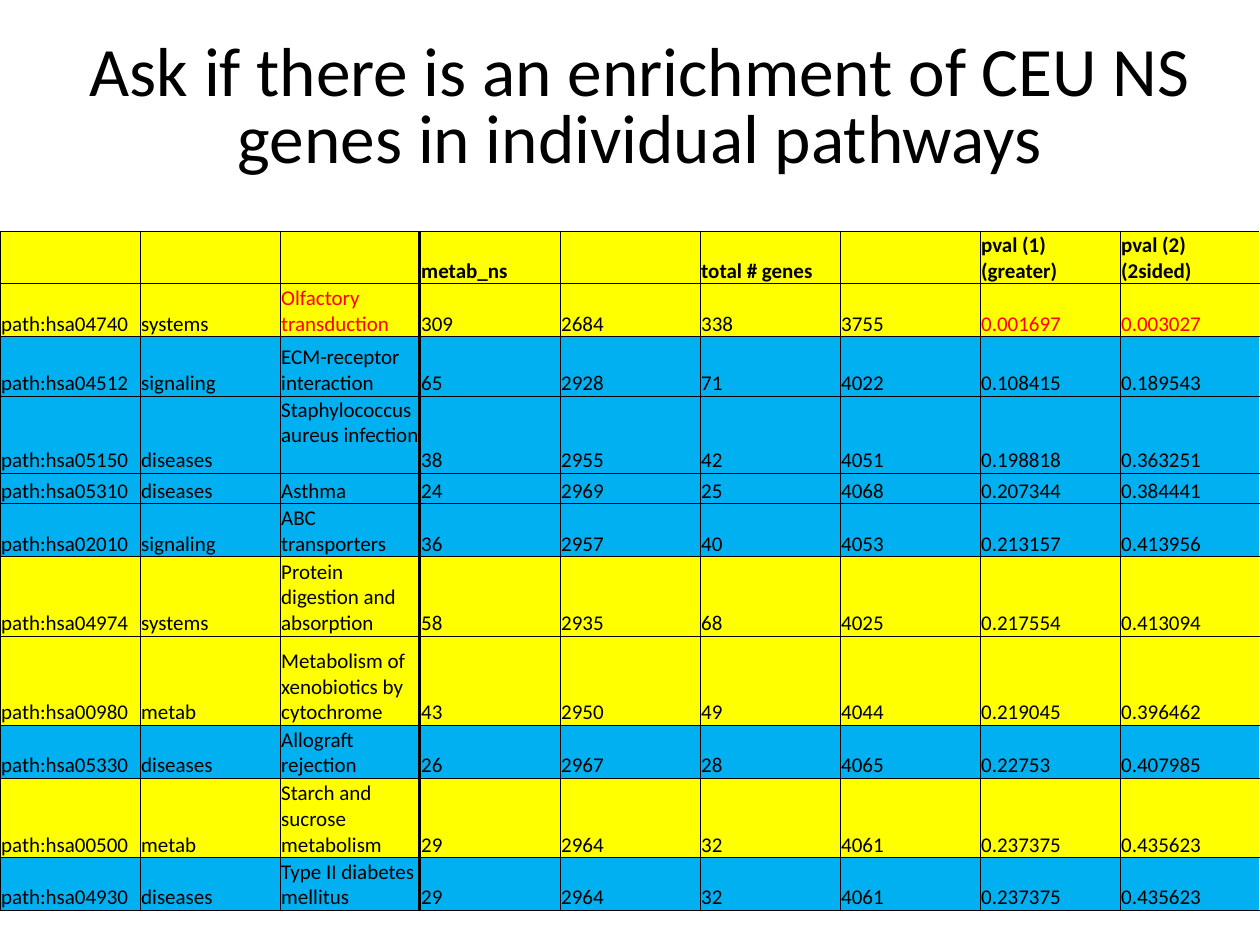
from lxml import etree
from pptx import Presentation
from pptx import util as u
from pptx.dml.color import RGBColor
from pptx.enum import text
from pptx.oxml import ns

BLACK, RED, YELLOW, BLUE = "000000", "FF0000", "FFFF00", "00B0F0"
GROUP_FILL = {"": YELLOW, "systems": YELLOW, "metab": YELLOW,
              "signaling": BLUE, "diseases": BLUE}
DIVIDER = 3  # the heavy rule runs to the left of this column
SIGNIFICANT = 0.05
NAME, P_GREATER, P_TWO_SIDED = 2, 7, 8

HEADER = ("", "", "", "metab_ns", "", "total # genes", "",
          "pval (1) (greater)", "pval (2) (2sided)")
PATHWAYS = [
    ("path:hsa04740", "systems", "Olfactory transduction", "309", "2684", "338", "3755", "0.001697", "0.003027"),
    ("path:hsa04512", "signaling", "ECM-receptor interaction", "65", "2928", "71", "4022", "0.108415", "0.189543"),
    ("path:hsa05150", "diseases", "Staphylococcus aureus infection", "38", "2955", "42", "4051", "0.198818", "0.363251"),
    ("path:hsa05310", "diseases", "Asthma", "24", "2969", "25", "4068", "0.207344", "0.384441"),
    ("path:hsa02010", "signaling", "ABC transporters", "36", "2957", "40", "4053", "0.213157", "0.413956"),
    ("path:hsa04974", "systems", "Protein digestion and absorption", "58", "2935", "68", "4025", "0.217554", "0.413094"),
    ("path:hsa00980", "metab", "Metabolism of xenobiotics by cytochrome", "43", "2950", "49", "4044", "0.219045", "0.396462"),
    ("path:hsa05330", "diseases", "Allograft rejection", "26", "2967", "28", "4065", "0.22753", "0.407985"),
    ("path:hsa00500", "metab", "Starch and sucrose metabolism", "29", "2964", "32", "4061", "0.237375", "0.435623"),
    ("path:hsa04930", "diseases", "Type II diabetes mellitus", "29", "2964", "32", "4061", "0.237375", "0.435623"),
]
ROW_HEIGHTS = (0.42, 0.42, 0.47, 0.47, 0.24, 0.42, 0.63, 0.71, 0.42, 0.63, 0.42)


def color(value):
    return RGBColor.from_string(value)


class SlideBuilder:
    """Holds the slide's style and draws each kind of element."""
    font = "Calibri"

    def __init__(self, deck):
        self.width, self.height = deck.slide_width, deck.slide_height
        self.page = deck.slides.add_slide(deck.slide_layouts[6])

    def area(self, left, top, width, height):
        """Turn shares of the slide into lengths."""
        return (int(left * self.width), int(top * self.height),
                int(width * self.width), int(height * self.height))

    def style(self, para, size, ink=BLACK, bold=False):
        for span in para.runs:
            span.font.name, span.font.size = self.font, u.Pt(size)
            span.font.bold, span.font.color.rgb = bold, color(ink)

    def title(self, wording, *shares):
        box = self.page.shapes.add_textbox(*self.area(*shares))
        frame = box.text_frame
        frame.word_wrap = True
        frame.vertical_anchor = text.MSO_ANCHOR.MIDDLE
        frame.text = wording
        para = frame.paragraphs[0]
        para.alignment, para.line_spacing = text.PP_ALIGN.CENTER, 0.8
        self.style(para, 39.6)

    def border(self, cell, side, points):
        line = etree.SubElement(cell._tc.get_or_add_tcPr(), ns.qn(f"a:ln{side}"),
                                w=str(u.Pt(points)))
        fill = etree.SubElement(line, ns.qn("a:solidFill"))
        etree.SubElement(fill, ns.qn("a:srgbClr"), val=BLACK)

    def cell(self, cell, wording, fill, borders, ink, bold):
        for side, points in borders.items():
            self.border(cell, side, points)
        cell.fill.solid()
        cell.fill.fore_color.rgb = color(fill)
        cell.vertical_anchor = text.MSO_ANCHOR.BOTTOM
        cell.margin_left = cell.margin_right = cell.margin_top = u.Inches(0.01)
        cell.margin_bottom = 0
        if wording:
            cell.text_frame.text = wording
            self.style(cell.text_frame.paragraphs[0], 12, ink, bold)

    def table(self, rows, heights, *shares):
        columns = len(rows[0])
        table = self.page.shapes.add_table(len(rows), columns, *self.area(*shares)).table
        table.first_row = table.horz_banding = False
        for column in table.columns:
            column.width = self.width // columns
        for r, (row, height) in enumerate(zip(rows, heights)):
            table.rows[r].height = u.Inches(height)
            hit = r > 0 and float(row[P_TWO_SIDED]) < SIGNIFICANT
            for c, wording in enumerate(row):
                borders = {"L": 2 if c == DIVIDER else 0.5,
                           "R": 2 if c == DIVIDER - 1 else 0.5, "T": 0.5, "B": 0.5}
                if c == columns - 1:
                    del borders["R"]
                red = hit and c in (NAME, P_GREATER, P_TWO_SIDED)
                self.cell(table.cell(r, c), wording, GROUP_FILL[row[1]], borders,
                          RED if red else BLACK, bold=r == 0)
        return table


def main():
    deck = Presentation()
    deck.slide_width, deck.slide_height = u.Inches(10), u.Inches(7.5)
    slide = SlideBuilder(deck)

    # Pathway table across the full width
    table = slide.table([HEADER] + PATHWAYS, ROW_HEIGHTS, 0, 0.2444, 1, 0.704)
    # The Staphylococcus name sits one line above the row's baseline
    table.cell(3, NAME).margin_bottom = u.Inches(0.2)

    # Title
    slide.title("Ask if there is an enrichment of CEU NS genes in individual pathways",
                0.058, 0.0333, 0.9, 0.1667)
    deck.save("out.pptx")


if __name__ == "__main__":
    main()
